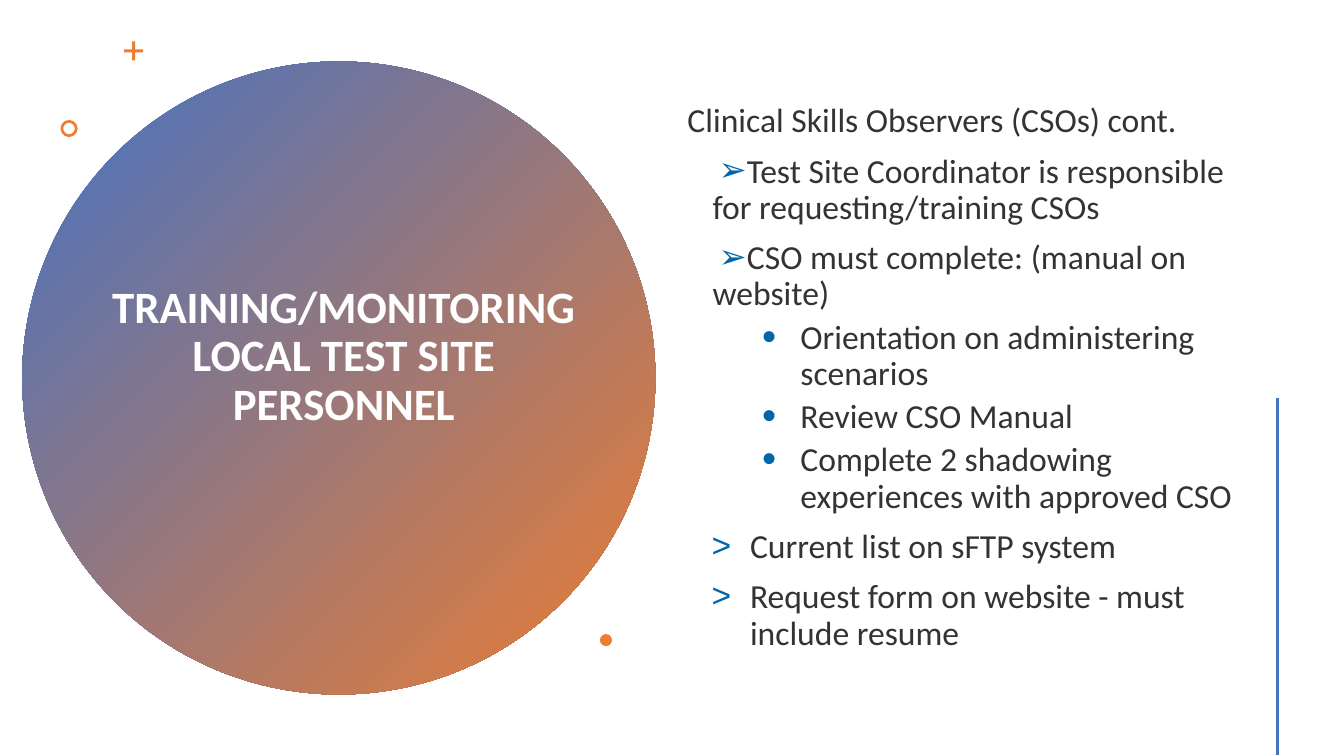
from lxml import etree
from pptx import Presentation
from pptx.dml.color import RGBColor
from pptx.enum import shapes, text
from pptx.oxml import ns
from pptx.util import Inches, Pt

BLUE = RGBColor(0x44, 0x72, 0xC4)
ORANGE = RGBColor(0xED, 0x7D, 0x31)
BULLET_BLUE = RGBColor(0x00, 0x66, 0xA8)
CHARCOAL = RGBColor(0x33, 0x33, 0x33)
WHITE = RGBColor(0xFF, 0xFF, 0xFF)
FONT = "Calibri"

# style: bullet, left margin, first-line indent (inches), space before (pt), bullet size (%)
STYLES = {
    "heading": (None, 0, 0, 0, 100),
    "arrow": ("➢", 0.25, 0.06, 10, 100),
    "dot": ("•", 1.12, -0.38, 5, 120),
    "chevron": (">", 0.62, -0.38, 10, 100),
}
REQUIREMENTS = [
    ("heading", "Clinical Skills Observers (CSOs) cont."),
    ("arrow", "Test Site Coordinator is responsible for requesting/training CSOs"),
    ("arrow", "CSO must complete: (manual on website)"),
    ("dot", "Orientation on administering scenarios"),
    ("dot", "Review CSO Manual"),
    ("dot", "Complete 2 shadowing experiences with approved CSO"),
    ("chevron", "Current list on sFTP system"),
    ("chevron", "Request form on website - must include resume"),
]


def add_plain_shape(slide, preset, left, top, size):
    shape = slide.shapes.add_shape(
        preset, Inches(left), Inches(top), Inches(size), Inches(size))
    shape.shadow.inherit = False
    shape.line.fill.background()
    return shape


def format_run(run, size, color, bold=False):
    run.font.name = FONT
    run.font.size = Pt(size)
    run.font.bold = bold
    run.font.color.rgb = color


def add_title_circle(slide, left, top, size):
    circle = add_plain_shape(slide, shapes.MSO_SHAPE.OVAL, left, top, size)
    circle.fill.gradient()
    circle.fill.gradient_angle = 315
    for stop, position, color in zip(circle.fill.gradient_stops, (0, 1), (BLUE, ORANGE)):
        stop.position = position
        stop.color.rgb = color

    title = slide.shapes.title
    title.left, title.top = Inches(left + 0.55), Inches(top + 0.4)
    title.width, title.height = Inches(5.28), Inches(5.07)
    circle._element.addnext(title._element)  # title in front of the circle
    frame = title.text_frame
    frame.text = "TRAINING/MONITORING LOCAL TEST SITE PERSONNEL"
    frame.word_wrap = True
    frame.auto_size = text.MSO_AUTO_SIZE.NONE
    frame.vertical_anchor = text.MSO_ANCHOR.MIDDLE
    heading = frame.paragraphs[0]
    heading.alignment = text.PP_ALIGN.CENTER
    heading.line_spacing = 0.9
    format_run(heading.runs[0], 32, WHITE, bold=True)


def add_accents(slide, left, top):
    """Place the plus, ring and dot around the title circle's box."""
    preset = shapes.MSO_SHAPE
    for kind, dx, dy, size, thickness in (
            (preset.CROSS, 1.01, -0.2, 0.19, 0.42),
            (preset.DONUT, 0.38, 0.58, 0.17, 0.16),
            (preset.OVAL, 5.73, 5.68, 0.12, None)):
        accent = add_plain_shape(slide, kind, left + dx, top + dy, size)
        accent.fill.solid()
        accent.fill.fore_color.rgb = ORANGE
        if thickness is not None:
            accent.adjustments[0] = thickness


def set_bullet(paragraph, bullet, margin, indent, percent):
    props = paragraph._p.get_or_add_pPr()
    props.set("marL", str(Inches(margin)))
    props.set("indent", str(Inches(indent)))
    if bullet is None:
        etree.SubElement(props, ns.qn("a:buNone"))
        return
    color = etree.SubElement(props, ns.qn("a:buClr"))
    etree.SubElement(color, ns.qn("a:srgbClr"), val=str(BULLET_BLUE))
    etree.SubElement(props, ns.qn("a:buSzPct"), val=str(percent * 1000))
    etree.SubElement(props, ns.qn("a:buFont"), typeface="Arial")
    etree.SubElement(props, ns.qn("a:buChar"), char=bullet)


def add_requirements(slide, left, top, width, height):
    body = slide.shapes.add_textbox(
        Inches(left), Inches(top), Inches(width), Inches(height))
    frame = body.text_frame
    frame.word_wrap = True
    frame.vertical_anchor = text.MSO_ANCHOR.MIDDLE
    for index, (style, wording) in enumerate(REQUIREMENTS):
        bullet, margin, indent, space, percent = STYLES[style]
        paragraph = frame.add_paragraph() if index else frame.paragraphs[0]
        paragraph.text = wording
        paragraph.level = 1 if style == "dot" else 0
        set_bullet(paragraph, bullet, margin, indent, percent)
        paragraph.line_spacing = 0.9
        paragraph.space_before = Pt(space)
        format_run(paragraph.runs[0], 24, CHARCOAL)


def add_side_rule(slide, x, top, bottom):
    rule = slide.shapes.add_connector(
        shapes.MSO_CONNECTOR.STRAIGHT, Inches(x), Inches(top), Inches(x), Inches(bottom))
    rule.line.color.rgb = BLUE
    rule.line.width = Pt(2)
    etree.SubElement(rule._element.spPr, ns.qn("a:effectLst"))


def main():
    deck = Presentation()
    deck.slide_width, deck.slide_height = Inches(13.33), Inches(7.5)
    slide = deck.slides.add_slide(deck.slide_layouts[5])
    add_title_circle(slide, 0.22, 0.61, 6.28)
    add_accents(slide, 0.22, 0.61)
    add_requirements(slide, 6.72, 0.23, 5.82, 7.04)
    add_side_rule(slide, 12.67, 3.95, 7.49)
    deck.save("out.pptx")


if __name__ == "__main__":
    main()
